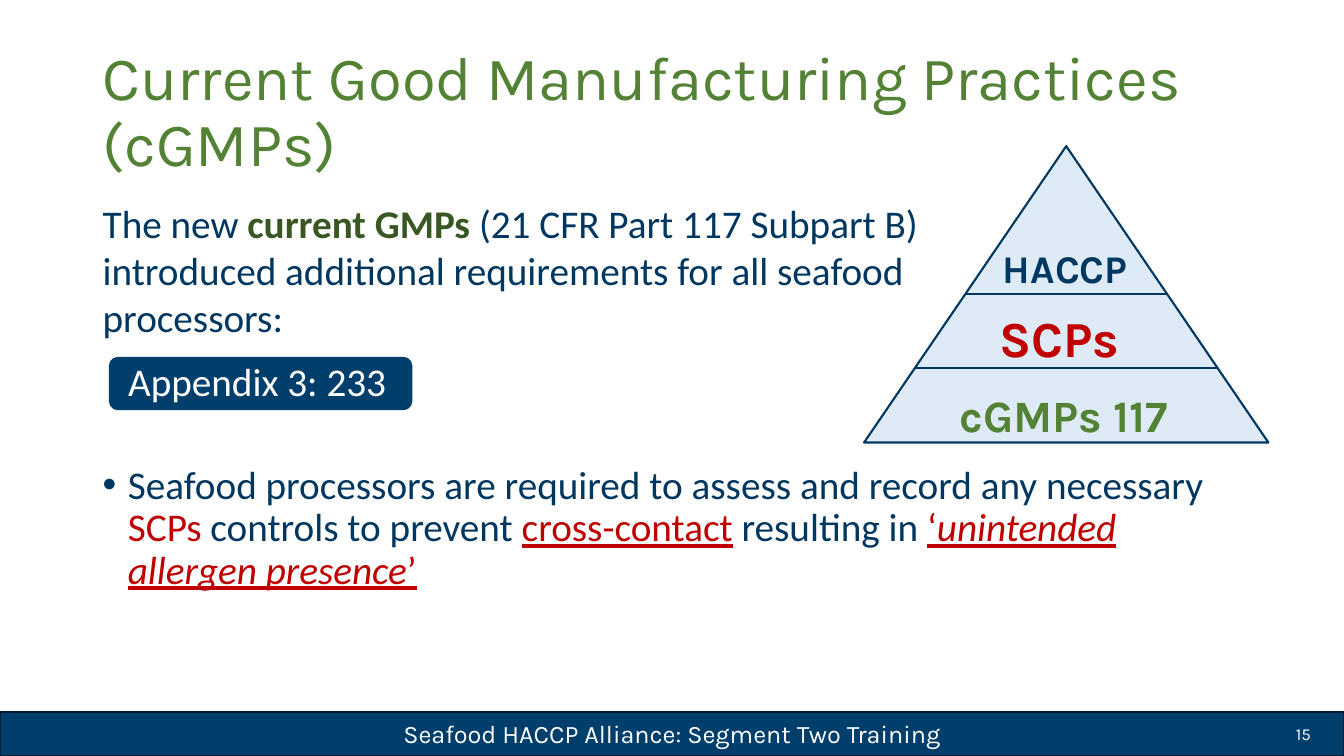
from lxml.etree import SubElement
from pptx import Presentation
from pptx.dml.color import RGBColor
from pptx.enum.shapes import MSO_CONNECTOR, MSO_SHAPE
from pptx.enum.text import MSO_ANCHOR, PP_ALIGN
from pptx.oxml.ns import qn
from pptx.util import Inches, Pt

NAVY = RGBColor(0x00, 0x37, 0x60)
BAND = RGBColor(0x00, 0x3E, 0x6C)
EDGE = RGBColor(0x00, 0x1B, 0x2F)
GREEN = RGBColor(0x54, 0x82, 0x35)
DARK = RGBColor(0x38, 0x57, 0x23)
RED = RGBColor(0xC0, 0x00, 0x00)
PALE = RGBColor(0xDE, 0xEB, 0xF7)
WHITE = RGBColor(0xFF, 0xFF, 0xFF)

# Each run: text, colour, style letters (b bold, i italic, u underline)
TITLE = [("Current Good Manufacturing Practices (cGMPs)", GREEN, "")]
INTRO = [
    ("The new ", NAVY, ""),
    ("current GMPs ", DARK, "b"),
    ("(21 CFR Part 117 Subpart B) introduced additional requirements "
     "for all seafood processors:", NAVY, ""),
]
BULLET = [
    ("Seafood processors are required to assess and record any necessary ", NAVY, ""),
    ("SCPs", RED, ""),
    (" controls to prevent ", NAVY, ""),
    ("cross-contact", RED, "u"),
    (" resulting in ", NAVY, ""),
    ("‘", RED, "u"),
    ("unintended allergen presence", RED, "iu"),
    ("’", RED, "u"),
]
APPENDIX = [("Appendix 3: 233", WHITE, "")]
FOOTER = [("Seafood HACCP Alliance: Segment Two Training", WHITE, "")]
NUMBER = [("15", WHITE, "")]

# Pyramid tiers: label, colour, size, box
TIERS = [
    ("HACCP", NAVY, 28, (9.78, 2.37, 1.57, 0.57)),
    ("SCPs", RED, 36, (9.76, 3.0, 1.5, 0.71)),
    ("cGMPs 117", GREEN, 32, (9.16, 3.8, 2.78, 0.64)),
]
PYRAMID = (8.57, 1.45, 4.01, 2.94)
CUTS = (0.5, 0.75)  # share of the pyramid's height

deck = Presentation()
deck.slide_width, deck.slide_height = Inches(13.33), Inches(7.5)
slide = deck.slides.add_slide(deck.slide_layouts[6])


def add_shape(kind, box, fill, line=None):
    shape = slide.shapes.add_shape(kind, *map(Inches, box))
    shape.shadow.inherit = False
    shape.fill.solid()
    shape.fill.fore_color.rgb = fill
    if line is None:
        shape.line.fill.background()
    else:
        shape.line.color.rgb = line
        shape.line.width = Pt(1.5)
    return shape


def write(shape, runs, size, font="Karla", align=PP_ALIGN.LEFT,
          anchor=MSO_ANCHOR.TOP, space=None):
    """Put runs in the first paragraph of a shape and return it."""
    frame = shape.text_frame
    frame.word_wrap = True
    frame.vertical_anchor = anchor
    para = frame.paragraphs[0]
    para.alignment = align
    para.line_spacing = space
    for text, color, style in runs:
        run = para.add_run()
        run.text = text
        run.font.name = font
        run.font.size = Pt(size)
        run.font.color.rgb = color
        run.font.bold = "b" in style
        run.font.italic = "i" in style
        run.font.underline = "u" in style
    return para


def add_text(box, runs, size, **style):
    return write(slide.shapes.add_textbox(*map(Inches, box)), runs, size, **style)


def add_rule(left, right, y):
    rule = slide.shapes.add_connector(
        MSO_CONNECTOR.STRAIGHT, Inches(left), Inches(y), Inches(right), Inches(y))
    rule.line.color.rgb = NAVY
    rule.line.width = Pt(1.5)
    SubElement(rule._element.spPr, qn("a:effectLst"))


def add_bullet(para):
    props = para._p.get_or_add_pPr()
    props.set("marL", str(Inches(0.25)))
    props.set("indent", str(-Inches(0.25)))
    font = SubElement(props, qn("a:buFont"))
    font.set("typeface", "Arial")
    SubElement(props, qn("a:buChar")).set("char", "•")


band = add_shape(MSO_SHAPE.RECTANGLE, (0, 7.06, 13.33, 0.44), BAND, EDGE)
write(band, FOOTER, 18, align=PP_ALIGN.CENTER, anchor=MSO_ANCHOR.MIDDLE)
add_text((10.1, 7.08, 3, 0.4), NUMBER, 12,
         align=PP_ALIGN.RIGHT, anchor=MSO_ANCHOR.MIDDLE)

add_text((0.92, 0.4, 11.14, 1.45), TITLE, 44, anchor=MSO_ANCHOR.MIDDLE, space=0.9)
add_text((0.92, 1.93, 8.41, 1.5), INTRO, 28, font="Calibri")
add_bullet(add_text((0.92, 4.57, 11.5, 2.18), BULLET, 28, font="Calibri", space=0.9))

add_shape(MSO_SHAPE.ISOSCELES_TRIANGLE, PYRAMID, PALE, NAVY)
left, top, width, height = PYRAMID
for cut in CUTS:
    mid, half = left + width / 2, width * cut / 2
    add_rule(mid - half, mid + half, top + height * cut)
for label, color, size, box in TIERS:
    add_text(box, [(label, color, "b")], size, align=PP_ALIGN.CENTER)

add_shape(MSO_SHAPE.ROUNDED_RECTANGLE, (1.08, 3.54, 3.01, 0.53), BAND)
add_text((0.79, 3.5, 3.52, 0.57), APPENDIX, 28, font="Calibri", align=PP_ALIGN.CENTER)

deck.save("out.pptx")
